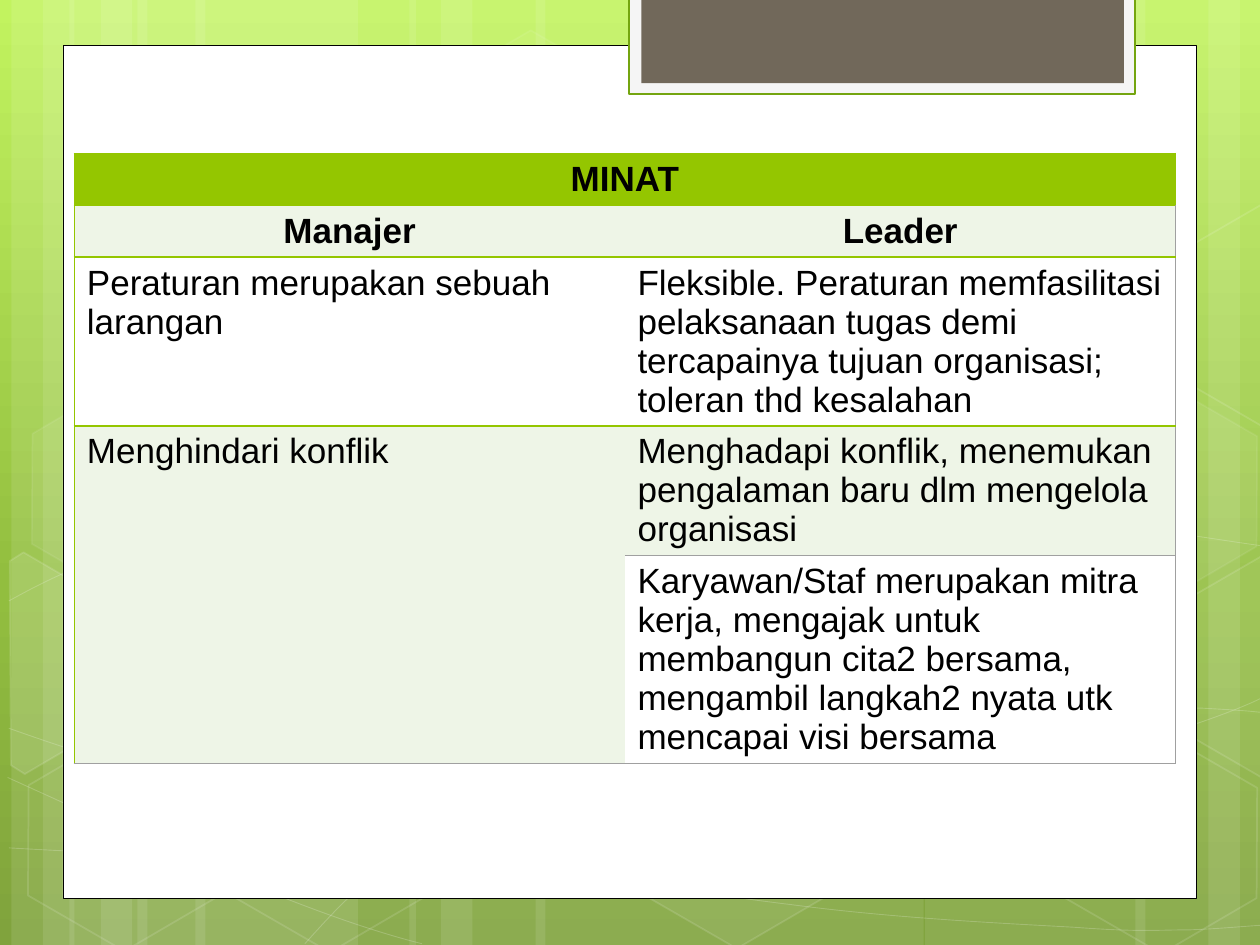
from copy import deepcopy
from math import cos, radians, sin

from lxml import etree
from pptx import Presentation
from pptx.dml.color import RGBColor
from pptx.enum.shapes import MSO_SHAPE
from pptx.enum.text import PP_ALIGN
from pptx.oxml.ns import qn
from pptx.util import Inches, Pt

RECT, HEX = MSO_SHAPE.RECTANGLE, MSO_SHAPE.HEXAGON
LEFT, MID = PP_ALIGN.LEFT, PP_ALIGN.CENTER
COLS, ROWS = 10, 7.5
CELL = Inches(1)
TILT = 30
WHITE, LIME, PALE, GRAY = "FFFFFF", "94C600", "EEF5E7", "A0A0A0"
FONT = {"name": "Arial", "size": Pt(20)}
STOPS = [(0, "C2F35F"), (0.62, "92BE3F"), (1, "80A33D")]

BANDS = [(1, 1.75), (0, 0.5), (0.25, 0.83)]
WAVES = [
    [(0.07, 6.73), (0.61, 6.76), (1.15, 6.79), (1.9, 6.78), (2.65, 6.77),
     (3.58, 6.75), (4.58, 6.65), (5.58, 6.55), (7, 6.36), (7.92, 6.17),
     (8.83, 5.98), (9.77, 5.68), (10.07, 5.51)],
    [(0.07, 4.77), (0.36, 4.61), (0.65, 4.46), (1.21, 4.31), (1.78, 4.16),
     (2.59, 3.94), (3.47, 3.87), (4.36, 3.8), (5.44, 3.79), (6.54, 3.87),
     (7.64, 3.95), (9.47, 4.26), (10.07, 4.34)],
    [(0.06, 6.17), (1.27, 6.72), (2.47, 7.27), (3.35, 7.49)],
    [(0.07, 5.78), (0.38, 5.89), (0.7, 6), (1.28, 6.16), (1.86, 6.31),
     (2.73, 6.56), (3.57, 6.73), (4.4, 6.9), (5.45, 7.08), (6.28, 7.18),
     (7.11, 7.29), (8, 7.33), (8.53, 7.36), (9.06, 7.4), (9.19, 7.38),
     (9.45, 7.38), (9.71, 7.37), (9.89, 7.35), (10.07, 7.34)],
    [(2.42, 7.49), (2.6, 7.29), (2.78, 7.09), (3.02, 6.91), (3.26, 6.72),
     (3.6, 6.53), (3.88, 6.39), (4.16, 6.25), (4.33, 6.19), (4.69, 6.09),
     (5.06, 5.99), (5.73, 5.85), (6.08, 5.78), (6.44, 5.71), (6.49, 5.71),
     (6.8, 5.69), (7.11, 5.66), (7.6, 5.63), (7.94, 5.62), (8.29, 5.61),
     (8.86, 5.62), (8.86, 5.62), (8.86, 5.62), (9.53, 5.62), (9.53, 5.62),
     (9.71, 5.63), (9.88, 5.64), (9.97, 5.65), (10.06, 5.66),
     (10.03, 5.65), (10.06, 5.66)],
]
HEXES = [
    (3.34, 0.36, 4, 8), (4.97, 5.89, 6, 12), (0.11, 5.91, 0, 12),
    (0.14, 3.12, 7, 8), (1.74, 5.92, 0, 12), (7.53, 4.53, 10, 12),
    (8.34, 5.93, 0, 12), (8.34, 3.14, 7, 8),
]
LEFT_CUT = [(0.08, 4.45), (0.19, 4.38), (0.96, 4.83), (0.95, 5.7), (0.2, 6.14), (0.09, 6.07)]
RIGHT_CUT = [(9.26, 4.85), (10.02, 4.41), (10.09, 4.46), (10.09, 6.13), (10.02, 6.17), (9.26, 5.73)]
CUTS = [
    (LEFT_CUT, (0.36, 5.36), 10),
    (RIGHT_CUT, (9.85, 5.2), 4),
    ([(x, y - 2.79) for x, y in RIGHT_CUT], (9.85, 2.41), 0),
]

HEIGHTS = [0.18, 0.18, 0.45, 0.59, 1.13]
TEXTS = [
    ("MINAT", ""),
    ("Manajer", "Leader"),
    ("Peraturan merupakan sebuah larangan",
     "Fleksible. Peraturan memfasilitasi pelaksanaan tugas demi "
     "tercapainya tujuan organisasi; toleran thd kesalahan"),
    ("Menghindari konflik",
     "Menghadapi konflik, menemukan pengalaman baru dlm mengelola organisasi"),
    ("",
     "Karyawan/Staf merupakan mitra kerja, mengajak untuk membangun cita2 "
     "bersama, mengambil langkah2 nyata utk mencapai visi bersama"),
]
FILLS = [LIME, PALE, WHITE, PALE, WHITE]


def hue(code):
    return RGBColor.from_string(code)


def emu(*vals):
    return [round(v * CELL) for v in vals]


def fade(part, share):
    tint = part.find(qn("a:solidFill"))[0]
    etree.SubElement(tint, qn("a:alpha"), val=str(share * 1000))


def style(shape, fill=None, alpha=100, line=None, width=1, clear=100):
    shape.shadow.inherit = False
    props = shape.element.spPr
    if fill and alpha:
        shape.fill.solid()
        shape.fill.fore_color.rgb = hue(fill)
        if alpha < 100:
            fade(props, alpha)
    else:
        shape.fill.background()
    if line:
        shape.line.color.rgb = hue(line)
        shape.line.width = Pt(width)
        if clear < 100:
            fade(props.find(qn("a:ln")), clear)
    else:
        shape.line.fill.background()


def block(slide, kind, box, **look):
    shape = slide.shapes.add_shape(kind, *emu(*box))
    style(shape, **look)
    return shape


def trace(slide, box, points, close, **look):
    spots = [emu(box[0] + x, box[1] + y) for x, y in points]
    pen = slide.shapes.build_freeform(*spots[0])
    pen.add_line_segments(spots[1:], close=close)
    shape = pen.convert_to_shape()
    style(shape, **look)
    return shape


def curve(slide, box, points, **look):
    shape = trace(slide, box, points[::3], False, **look)
    legs = shape.element.findall(".//" + qn("a:lnTo"))
    for i, leg in enumerate(legs):
        bend = etree.Element(qn("a:cubicBezTo"))
        for x, y in points[3 * i + 1:3 * i + 4]:
            px, py = emu(box[0] + x, box[1] + y)
            etree.SubElement(bend, qn("a:pt"), x=str(px - shape.left), y=str(py - shape.top))
        leg.getparent().replace(leg, bend)


def turn(points, mid):
    c, s = cos(radians(TILT)), sin(radians(TILT))
    offs = [(x - mid[0], y - mid[1]) for x, y in points]
    return [(mid[0] + x * c + y * s, mid[1] - x * s + y * c) for x, y in offs]


def draw_back(slide):
    fill = slide.background.fill
    fill.gradient()
    fill.gradient_angle = 270
    stops = slide.element.find(".//" + qn("a:gsLst"))
    stops.append(deepcopy(stops[-1]))
    for stop, (place, code) in zip(fill.gradient_stops, STOPS):
        stop.position = place
        stop.color.rgb = hue(code)


def draw_bands(slide, box):
    left, top, width, height = box
    for start, wide in ((0.09, 1.75), (0.55, 1.75), (3.25, 3.08)):
        for gap, size in BANDS:
            size = wide if gap == 1 else size
            block(slide, RECT, (left + start + gap, top, size, height), fill=WHITE, alpha=10)
    for gap, size in BANDS:
        x = left + width + 0.09 - gap - size
        band = block(slide, RECT, (x, top, size, height), fill=WHITE, alpha=10)
        band.rotation = 180


def draw_decor(slide, box):
    for wave in WAVES:
        curve(slide, box, wave, line=WHITE, width=0.5, clear=20)
    for x, y, alpha, clear in HEXES:
        shape = block(slide, HEX, (box[0] + x, box[1] + y, 1.75, 1.52),
                      fill=WHITE, alpha=alpha, line=WHITE, clear=clear)
        shape.adjustments[0] = 0.285
        shape.rotation = TILT
    for points, mid, alpha in CUTS:
        shape = trace(slide, box, turn(points, mid), True,
                      fill=WHITE, alpha=alpha, line=WHITE, clear=12)
        shape.rotation = TILT


def draw_tab(slide, box):
    left, top, width, height = box
    block(slide, RECT, box, fill="F5F5F5", line="74A510", width=1.25)
    block(slide, RECT, (left + 0.1, top, width - 0.19, height - 0.09), fill="71685A")


def edge(cell, sides):
    props = cell._tc.get_or_add_tcPr()
    for i, (side, code) in enumerate(sides.items()):
        line = etree.Element(qn("a:ln" + side), w=str(Pt(0.5 if code == GRAY else 1)))
        if code:
            fill = etree.SubElement(line, qn("a:solidFill"))
            etree.SubElement(fill, qn("a:srgbClr"), val=code)
        else:
            etree.SubElement(line, qn("a:noFill"))
        props.insert(i, line)


def draw_table(slide, box):
    frame = slide.shapes.add_table(len(TEXTS), 2, *emu(*box))
    table = frame.table
    table.first_row = table.horz_banding = False
    for col in table.columns:
        col.width = emu(box[2] / 2)[0]
    for r, (texts, high, fill) in enumerate(zip(TEXTS, HEIGHTS, FILLS)):
        table.rows[r].height = emu(high)[0]
        for c, text in enumerate(texts):
            cell = table.cell(r, c)
            cell.fill.solid()
            cell.fill.fore_color.rgb = hue(PALE if (r, c) == (4, 0) else fill)
            para = cell.text_frame.paragraphs[0]
            para.alignment = MID if r < 2 else LEFT
            if text:
                run = para.add_run()
                run.text = text
                for name, val in {**FONT, "bold": r < 2}.items():
                    setattr(run.font, name, val)
                run.font.color.rgb = hue("000000")
            side = GRAY if c else None
            edge(cell, {
                "L": None if c else LIME,
                "R": LIME if r == 0 else side,
                "T": LIME if r < 4 else side,
                "B": LIME if r < 3 else GRAY,
            })
    table.cell(0, 0).merge(table.cell(0, 1))
    table.cell(3, 0).merge(table.cell(4, 0))
    frame.height = emu(box[3])[0]


def main():
    deck = Presentation()
    deck.slide_width, deck.slide_height = emu(COLS, ROWS)
    slide = deck.slides.add_slide(deck.slide_layouts[6])
    page = (0, 0, COLS, ROWS)
    draw_back(slide)
    draw_bands(slide, page)
    draw_decor(slide, page)
    block(slide, RECT, (0.5, 0.36, 9, 6.77), fill=WHITE, line="000000", width=0.5)
    draw_tab(slide, (4.99, -0.02, 4.02, 0.77))
    draw_table(slide, (0.59, 1.22, 8.74, 4.5))
    deck.save("out.pptx")


if __name__ == "__main__":
    main()
